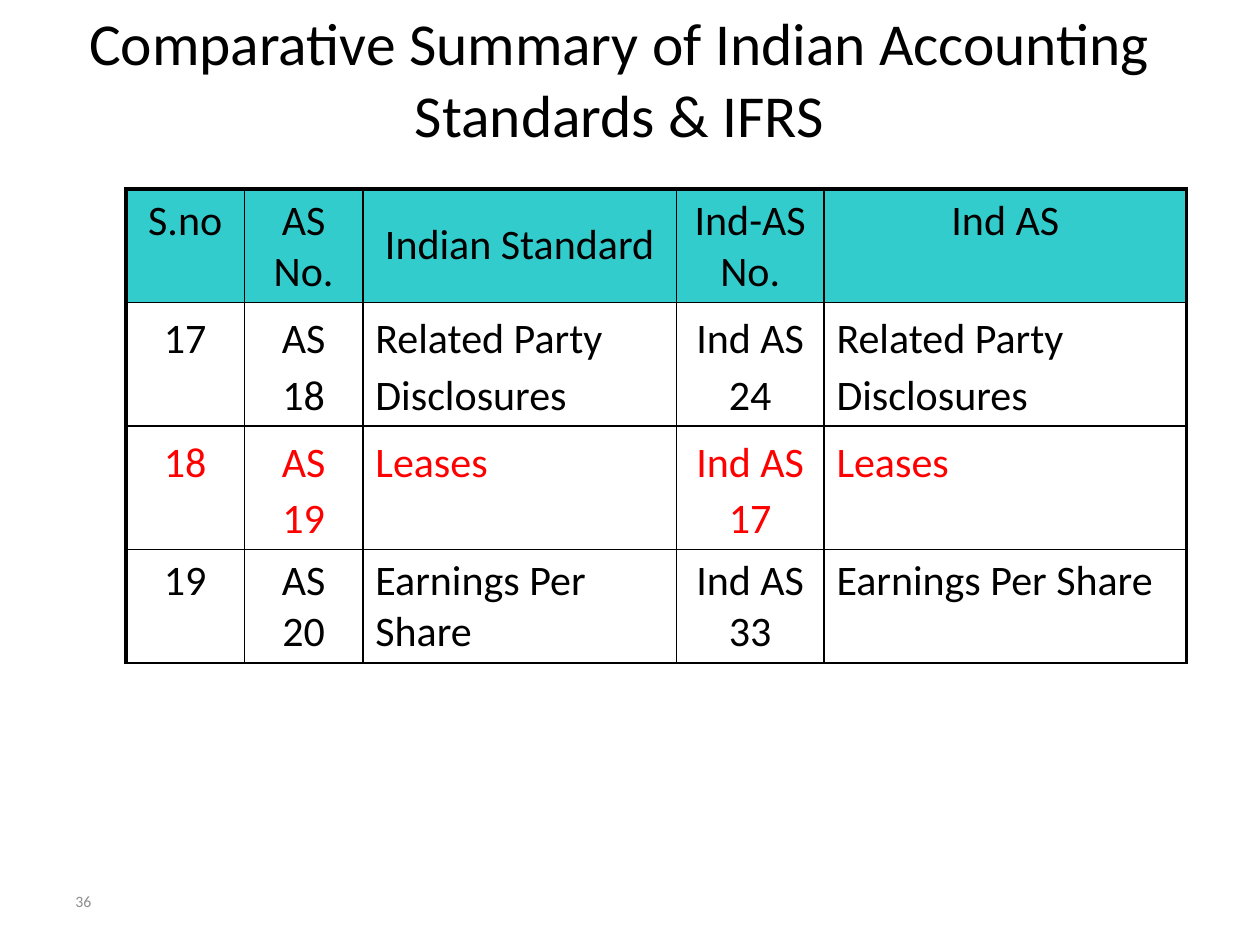
from lxml import etree
from pptx import Presentation
from pptx import util as u
from pptx.dml.color import RGBColor
from pptx.enum import text
from pptx.oxml import ns

SCALE = 9144
HUES = {"ink": "000000", "red": "FF0000", "head": "33CCCC", "gray": "8C8C8C"}
MID, TOP = text.MSO_ANCHOR.MIDDLE, text.MSO_ANCHOR.TOP
LEFT, CENTER, JUST = (text.PP_ALIGN.LEFT, text.PP_ALIGN.CENTER,
                      text.PP_ALIGN.JUSTIFY)


def px(size):
    return u.Emu(size * SCALE)


def hue(name):
    return RGBColor.from_string(HUES[name])


class Deck:
    face = "Calibri"

    def __init__(self, wide, high):
        self.prs = Presentation()
        self.prs.slide_width, self.prs.slide_height = px(wide), px(high)
        self.slide = self.prs.slides.add_slide(self.prs.slide_layouts[6])

    def style(self, frame, words, size, tone, align):
        frame.word_wrap = True
        para = frame.paragraphs[0]
        para.text = words
        para.alignment = align
        para.font.name = self.face
        para.font.size = u.Pt(size)
        para.font.color.rgb = hue(tone)
        return para

    def label(self, area, words, size, tone="ink", align=LEFT, anchor=TOP):
        frame = self.slide.shapes.add_textbox(*map(px, area)).text_frame
        frame.vertical_anchor = anchor
        self.style(frame, words, size, tone, align)

    def edge(self, cell, side, width):
        props = cell._tc.get_or_add_tcPr()
        line = etree.SubElement(props, ns.qn(f"a:ln{side}"),
                                w=str(u.Pt(width)))
        fill = etree.SubElement(line, ns.qn("a:solidFill"))
        etree.SubElement(fill, ns.qn("a:srgbClr"), val=HUES["ink"])

    def cell(self, cell, words, edges, fill=None, tone="ink", align=CENTER,
             anchor=TOP, space=None):
        for side, width in edges.items():
            self.edge(cell, side, width)
        if fill:
            cell.fill.solid()
            cell.fill.fore_color.rgb = hue(fill)
        else:
            cell.fill.background()
        cell.vertical_anchor = anchor
        para = self.style(cell.text_frame, words, 24, tone, align)
        if space:
            para.line_spacing = space

    def table(self, left, top, cols, rows):
        grid = self.slide.shapes.add_table(
            len(rows), len(cols), px(left), px(top),
            px(sum(cols)), px(sum(rows))).table
        grid.first_row = grid.horz_banding = False
        for col, wide in zip(grid.columns, cols):
            col.width = px(wide)
        for row, high in zip(grid.rows, rows):
            row.height = px(high)
        return grid


def main():
    deck = Deck(1000, 750)
    deck.label((50, 695, 233, 40), "36", 9, "gray", anchor=MID)

    data = [
        ("S.no", "AS No.", "Indian Standard", "Ind-AS No.", "Ind AS"),
        ("17", "AS 18", "Related Party Disclosures", "Ind AS 24",
         "Related Party Disclosures"),
        ("18", "AS 19", "Leases", "Ind AS 17", "Leases"),
        ("19", "AS 20", "Earnings Per Share", "Ind AS 33",
         "Earnings Per Share"),
    ]
    looks = [
        {"fill": "head"},
        {"space": 1.1},
        {"space": 1.1, "tone": "red"},
        {},
    ]
    names = (2, 4)
    grid = deck.table(100, 150, (94, 94, 249, 117, 288), (90, 98, 98, 90))
    for r, (row, look) in enumerate(zip(data, looks)):
        for c, words in enumerate(row):
            edges = {"L": 1 if c else 2.25, "R": 2.25 if c == 4 else 1,
                     "T": 1 if r else 2.25, "B": 1}
            side = JUST if r == 2 else LEFT
            align = side if r and c in names else CENTER
            anchor = MID if r == 0 and 0 < c < 4 else TOP
            deck.cell(grid.cell(r, c), words, edges, align=align,
                      anchor=anchor, **look)

    deck.label((25, 0, 933, 125),
               "Comparative Summary of Indian Accounting Standards & IFRS",
               34, align=CENTER)
    deck.prs.save("out.pptx")


if __name__ == "__main__":
    main()
